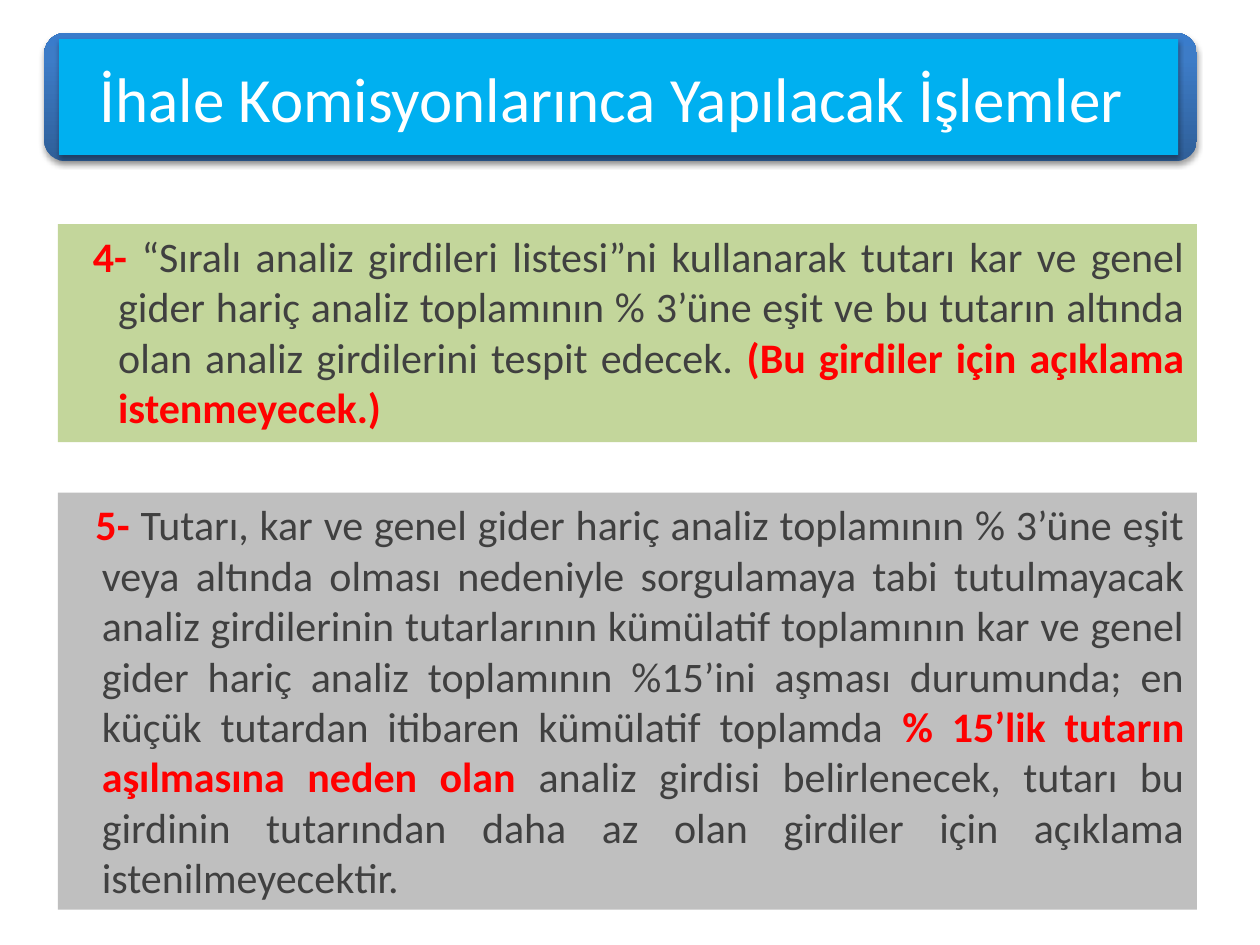
from copy import deepcopy
from lxml.etree import SubElement
from pptx import Presentation
from pptx.dml.color import RGBColor
from pptx.enum.shapes import MSO_SHAPE as Preset
from pptx.enum.text import MSO_ANCHOR as Anchor, PP_ALIGN as Align
from pptx.oxml.ns import qn
from pptx.util import Inches, Pt

COLORS = {
    "white": "FFFFFF", "sky": "00B0F0", "green": "C3D69B", "gray": "BFBFBF",
    "text": "404040", "accent": "FF0000", "shadow": "000000",
    "navy": "2F5F99", "blue": "3D7CC7", "light": "3A7CCB",
}


class SlideBuilder:
    """Draws styled elements on one slide with a grid of 20 columns and 15 rows."""

    font, columns, rows = "Calibri", 20, 15

    def __init__(self):
        self.deck = Presentation()
        self.deck.slide_width, self.deck.slide_height = Inches(10), Inches(7.5)
        self.slide = self.deck.slides.add_slide(self.deck.slide_layouts[6])

    def color(self, name):
        return RGBColor.from_string(COLORS[name])

    def box(self, preset, column, row, width, height, fill=None):
        across = self.deck.slide_width / self.columns
        down = self.deck.slide_height / self.rows
        box = self.slide.shapes.add_shape(
            preset, round(column * across), round(row * down),
            round(width * across), round(height * down))
        box.shadow.inherit = False
        box.line.fill.background()
        if fill:
            box.fill.solid()
            box.fill.fore_color.rgb = self.color(fill)
        return box

    def gradient(self, box, names):
        box.fill.gradient()
        box.fill.gradient_angle = 90
        stops = box.element.spPr.find(qn("a:gradFill")).find(qn("a:gsLst"))
        stops.insert(1, deepcopy(stops[0]))
        for stop, name, position in zip(box.fill.gradient_stops, names, (0, 0.8, 1)):
            stop.position = position
            stop.color.rgb = self.color(name)

    def drop_shadow(self, box):
        effects = box.element.spPr.find(qn("a:effectLst"))
        shadow = SubElement(effects, qn("a:outerShdw"), blurRad=str(Pt(3.1)),
                            dist=str(Pt(1.8)), dir="5400000", rotWithShape="0")
        tint = SubElement(shadow, qn("a:srgbClr"), val=COLORS["shadow"])
        SubElement(tint, qn("a:alpha"), val="35000")

    def add_text(self, box, runs, size, align, anchor):
        frame = box.text_frame
        frame.word_wrap = True
        frame.vertical_anchor = anchor
        para = frame.paragraphs[0]
        para.alignment = align
        for text, name, bold in runs:
            span = para.add_run()
            span.text = text
            span.font.name, span.font.size, span.font.bold = self.font, Pt(size), bold
            span.font.color.rgb = self.color(name)
        return para

    def banner(self, text):
        frame = self.box(Preset.ROUNDED_RECTANGLE, 0.7, 0.52, 18.3, 2.04)
        self.gradient(frame, ("navy", "blue", "light"))
        plate = self.box(Preset.RECTANGLE, 0.94, 0.62, 17.76, 1.84, "sky")
        for box in (frame, plate):
            self.drop_shadow(box)
        self.add_text(plate, [(text, "white", False)], 36, Align.CENTER, Anchor.MIDDLE)
        self.slide.shapes.add_group_shape([frame, plate])

    def panel(self, row, height, fill, margin, indent, runs, after=0):
        box = self.box(Preset.RECTANGLE, 0.92, row, 18.08, height, fill)
        para = self.add_text(box, runs, 24, Align.JUSTIFY, Anchor.TOP)
        para.space_before, para.space_after = Pt(4.8), Pt(after)
        layout = para._p.get_or_add_pPr()
        layout.set("marL", str(Inches(margin)))
        layout.set("indent", str(Inches(indent)))


def main():
    page = SlideBuilder()
    page.panel(3.56, 3.46, "green", 0.38, -0.2, [
        ("4- ", "accent", True),
        ("“Sıralı analiz girdileri listesi”ni kullanarak tutarı kar ve genel gider "
         "hariç analiz toplamının % 3’üne eşit ve bu tutarın altında olan analiz "
         "girdilerini tespit edecek. ", "text", False),
        ("(Bu girdiler için açıklama istenmeyecek.)", "accent", True),
    ])
    page.banner("İhale Komisyonlarınca Yapılacak İşlemler ")
    page.panel(7.82, 6.62, "gray", 0.25, -0.05, [
        ("5- ", "accent", True),
        ("Tutarı, kar ve genel gider hariç analiz toplamının % 3’üne eşit veya "
         "altında olması nedeniyle sorgulamaya tabi tutulmayacak analiz girdilerinin "
         "tutarlarının kümülatif toplamının kar ve genel gider hariç analiz "
         "toplamının %15’ini aşması durumunda; en küçük tutardan itibaren kümülatif "
         "toplamda ", "text", False),
        ("% 15’lik tutarın aşılmasına neden olan ", "accent", True),
        ("analiz girdisi belirlenecek, tutarı bu girdinin tutarından daha az olan "
         "girdiler için açıklama istenilmeyecektir. ", "text", False),
    ], after=3)
    page.deck.save("out.pptx")


if __name__ == "__main__":
    main()
